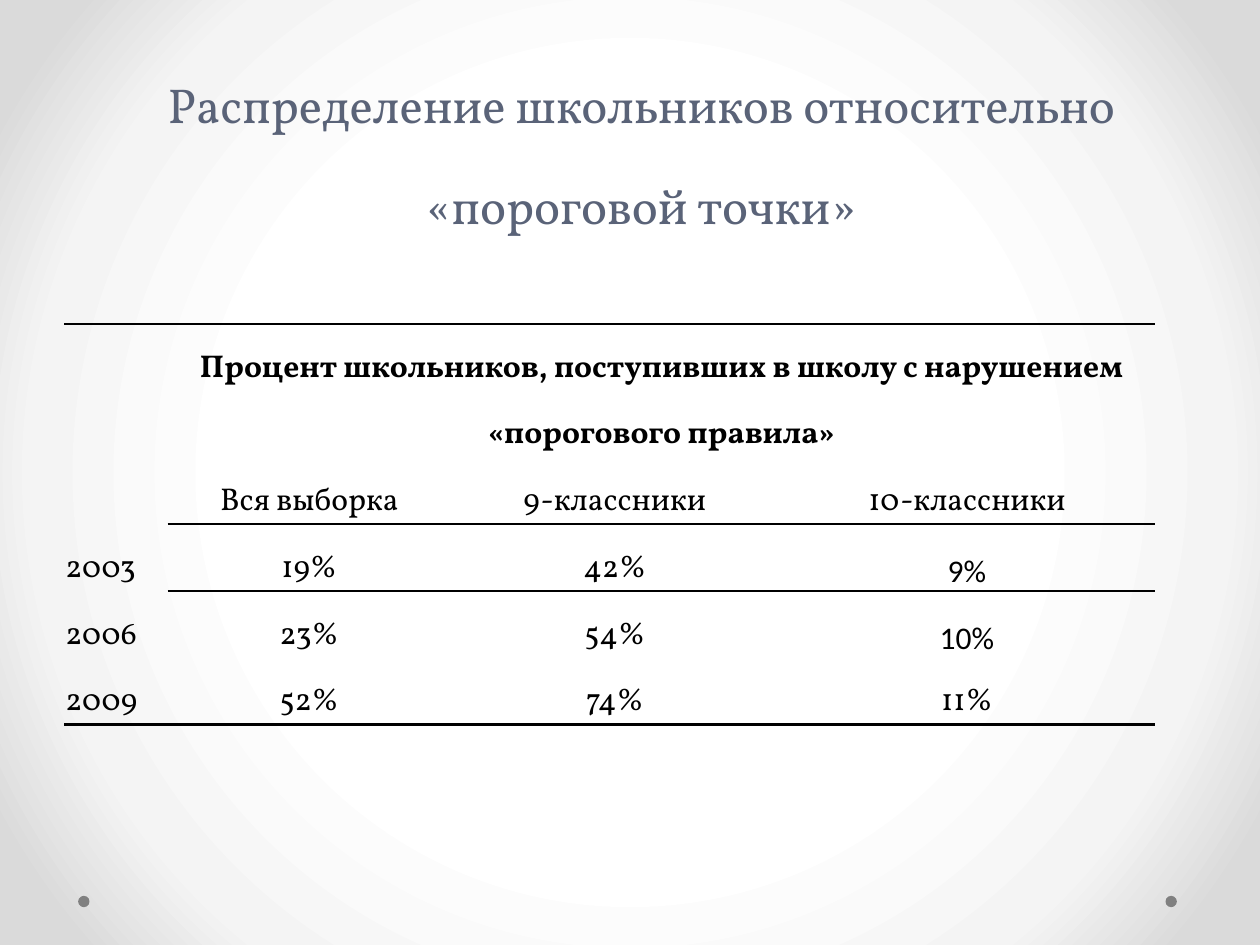
from lxml import etree
from pptx import Presentation
from pptx.dml.color import RGBColor
from pptx.enum.shapes import MSO_SHAPE as Shape
from pptx.enum.text import MSO_ANCHOR as Anchor, PP_ALIGN as Align
from pptx.oxml.ns import qn
from pptx.util import Inches, Pt

COLORS = {
    "title": "5A6378",
    "ink": "000000",
    "dot": "808080",
    "center": "FFFFFF",
    "ring": "F4F4F4",
    "edge": "DADADA",
}
FONT, ALT_FONT = "Vollkorn", "Calibri"
NO_GRID_STYLE = "{2D5ABB26-0587-4C30-8999-92F81FD0307C}"

COLUMN_WIDTHS = [0.82, 2.25, 2.6, 2.99]
LINE_HEIGHT = 0.53
HEADING = "Процент школьников, поступивших в школу с нарушением «порогового правила»"
ROWS = [
    ["", HEADING, "", ""],
    ["2003", "Вся выборка", "9-классники", "10-классники"],
    ["", "19%", "42%", "9%"],
    ["2006", "23%", "54%", "10%"],
    ["2009", "52%", "74%", "11%"],
]
# The heading takes two lines, every other row one
ROW_HEIGHTS = [2 * LINE_HEIGHT] + [LINE_HEIGHT] * (len(ROWS) - 1)
ALT_FONT_CELLS = {(2, 3), (3, 3)}
MIDDLE_CELLS = {(4, 2), (4, 3)}


def color(name):
    return RGBColor.from_string(COLORS[name])


def add_background(page):
    """Radial gradient, light in the middle."""
    page.background.fill.gradient()
    gradient = page.element.find(".//" + qn("a:gradFill"))
    for child in list(gradient):
        gradient.remove(child)
    stops = etree.SubElement(gradient, qn("a:gsLst"))
    for percent, name in ((50, "center"), (76, "ring"), (92, "edge")):
        stop = etree.SubElement(stops, qn("a:gs"), pos=str(percent * 1000))
        etree.SubElement(stop, qn("a:srgbClr"), val=COLORS[name])
    shade = etree.SubElement(gradient, qn("a:path"), path="circle")
    etree.SubElement(shade, qn("a:fillToRect"), dict.fromkeys("ltrb", "50000"))


def add_dot(page, left):
    dot = page.shapes.add_shape(
        Shape.OVAL, Inches(left), Inches(7.11), Inches(0.09), Inches(0.09))
    dot.shadow.inherit = False
    dot.fill.solid()
    dot.fill.fore_color.rgb = color("dot")
    dot.line.fill.background()


def add_span(para, text, size, color_name, font=FONT, bold=False):
    span = para.add_run()
    span.text = text
    span.font.size = Pt(size)
    span.font.name = font
    span.font.bold = bold
    span.font.color.rgb = color(color_name)


def add_title(page, text):
    box = page.shapes.add_textbox(Inches(0.59), Inches(0.68), Inches(9), Inches(1.23))
    frame = box.text_frame
    frame.word_wrap = True
    frame.vertical_anchor = Anchor.BOTTOM
    para = frame.paragraphs[0]
    para.alignment = Align.CENTER
    para.line_spacing = Pt(58)
    add_span(para, text, 28, "title")


def add_border(cell, side, width):
    line = etree.SubElement(
        cell._tc.get_or_add_tcPr(), qn("a:ln" + side), w=str(Pt(width)))
    fill = etree.SubElement(line, qn("a:solidFill"))
    etree.SubElement(fill, qn("a:srgbClr"), val=COLORS["ink"])


def cell_borders(row, column):
    """Sides and widths of the rules around one cell."""
    if row == 0:
        return [("T", 1.5)]
    if row == 4:
        return [("B", 1.5)]
    if column and row == 1:
        return [("B", 1)]
    if column and row == 2:
        return [("T", 1), ("B", 1)]
    return []


def fill_cell(cell, row, column, text):
    for side, width in cell_borders(row, column):
        add_border(cell, side, width)
    cell.fill.background()
    cell.margin_left = cell.margin_right = cell.margin_top = Inches(0.01)
    cell.margin_bottom = 0
    cell.vertical_anchor = Anchor.MIDDLE if (row, column) in MIDDLE_CELLS else Anchor.BOTTOM
    if text:
        para = cell.text_frame.paragraphs[0]
        para.alignment = Align.CENTER if column else Align.LEFT
        para.line_spacing = 1.5
        font = ALT_FONT if (row, column) in ALT_FONT_CELLS else FONT
        add_span(para, text, 18, "ink", font, bold=row == 0)


def add_results_table(page):
    frame = page.shapes.add_table(
        len(ROWS), len(COLUMN_WIDTHS), Inches(0.51), Inches(2.57),
        Inches(sum(COLUMN_WIDTHS)), Inches(sum(ROW_HEIGHTS)))
    table = frame.table
    table.first_row = table.horz_banding = False
    table._tbl.tblPr.find(qn("a:tableStyleId")).text = NO_GRID_STYLE
    for column, width in zip(table.columns, COLUMN_WIDTHS):
        column.width = Inches(width)
    for row, height in zip(table.rows, ROW_HEIGHTS):
        row.height = Inches(height)
    table.cell(0, 1).merge(table.cell(0, 3))
    table.cell(1, 0).merge(table.cell(2, 0))
    for row, texts in enumerate(ROWS):
        for column, text in enumerate(texts):
            fill_cell(table.cell(row, column), row, column, text)


def main():
    deck = Presentation()
    deck.slide_width, deck.slide_height = Inches(10), Inches(7.5)
    page = deck.slides.add_slide(deck.slide_layouts[6])

    # Backdrop
    add_background(page)
    for left in (9.25, 0.62):
        add_dot(page, left)

    # Content
    add_title(page, "Распределение школьников относительно «пороговой точки»")
    add_results_table(page)
    deck.save("out.pptx")


if __name__ == "__main__":
    main()
